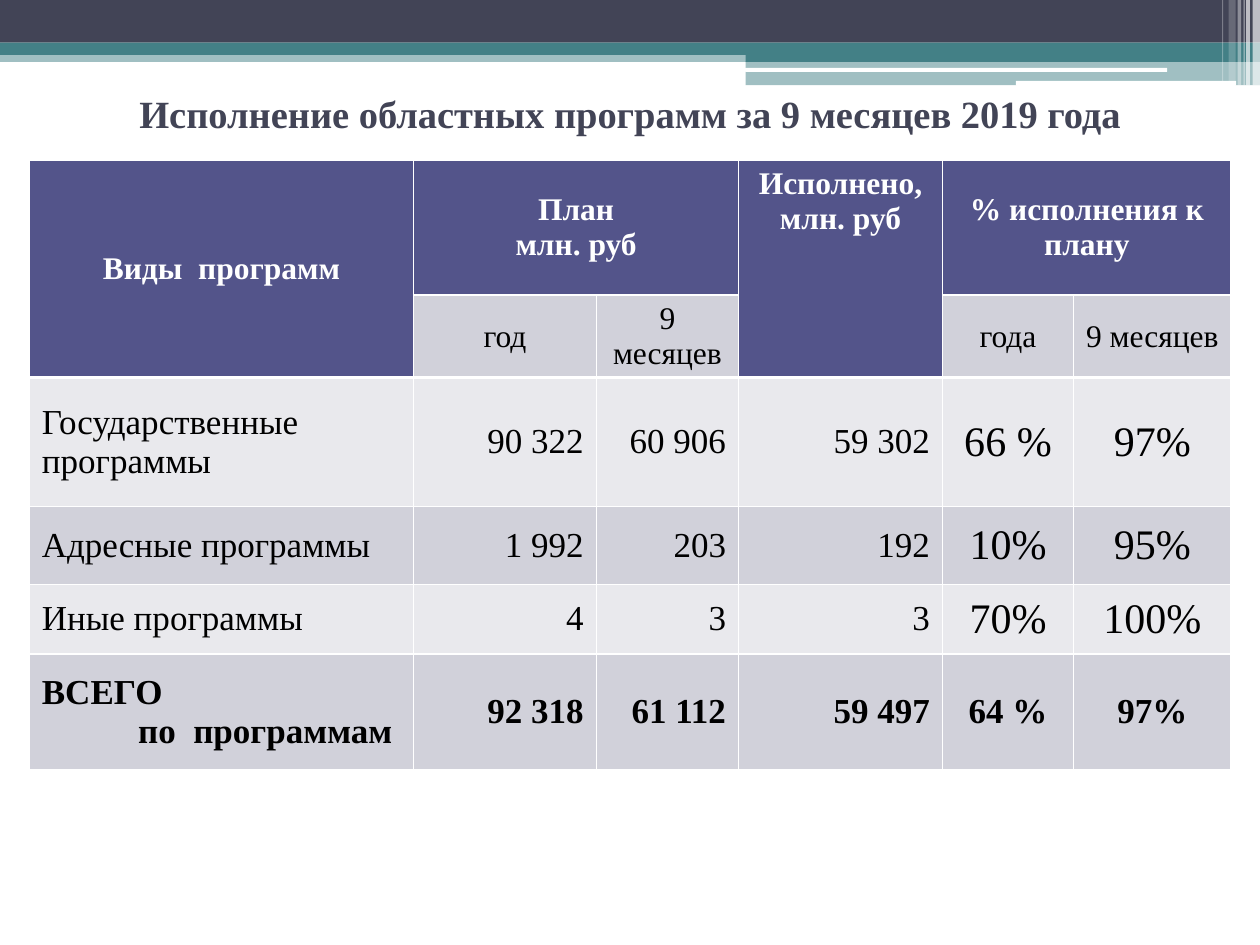
from dataclasses import dataclass

from lxml.etree import SubElement
from pptx import Presentation
from pptx.dml.color import RGBColor
from pptx.enum.shapes import MSO_SHAPE as SHAPE
from pptx.enum.text import MSO_ANCHOR as ANCHOR, PP_ALIGN as ALIGN
from pptx.oxml import parse_xml
from pptx.oxml.ns import nsdecls, qn
from pptx.util import Cm, Pt


@dataclass(frozen=True)
class Theme:
    font: str = "Times New Roman"
    dark: str = "424456"
    teal: str = "438086"
    white: str = "FFFFFF"
    black: str = "000000"
    header: str = "53548A"
    light: str = "E9E9ED"
    mid: str = "D1D1DA"
    title_size: int = 22
    header_size: int = 18
    body_size: int = 20
    percent_size: int = 24
    border: float = 1
    heavy_border: float = 2.25


theme = Theme()


def add_bar(left, top, width, height, color, opacity=100, kind=SHAPE.RECTANGLE):
    bar = slide.shapes.add_shape(kind, Cm(left), Cm(top), Cm(width), Cm(height))
    bar.shadow.inherit = False
    bar.line.fill.background()
    bar.fill.solid()
    bar.fill.fore_color.rgb = RGBColor.from_string(color)
    if opacity < 100:
        srgb = bar.fill._xPr.find(qn("a:solidFill")).find(qn("a:srgbClr"))
        SubElement(srgb, qn("a:alpha"), val=str(opacity * 1000))


def fill_cell(row, col, lines, color, text_color, size, bold, align):
    cell = table.cell(row, col)
    cell.fill.solid()
    cell.fill.fore_color.rgb = RGBColor.from_string(color)
    cell.vertical_anchor = ANCHOR.MIDDLE
    cell.text = lines
    for paragraph in cell.text_frame.paragraphs:
        paragraph.alignment = align
        paragraph.font.name = theme.font
        paragraph.font.size = Pt(size)
        paragraph.font.bold = bold
        paragraph.font.color.rgb = RGBColor.from_string(text_color)
    return cell


prs = Presentation()
prs.slide_width, prs.slide_height = Cm(25.4), Cm(19.05)
slide = prs.slides.add_slide(prs.slide_layouts[5])

# Bands across the top
add_bar(0, 1.02, 25.4, 0.23, theme.teal, 50)
add_bar(0, 0, 25.4, 0.86, theme.dark)
add_bar(0, 0.86, 25.4, 0.25, theme.teal)
add_bar(15.03, 1, 10.37, 0.25, theme.teal)
add_bar(15.03, 1.24, 10.37, 0.48, theme.teal, 50)
add_bar(15.02, 1.37, 8.51, 0.08, theme.white, kind=SHAPE.ROUNDED_RECTANGLE)
add_bar(20.48, 1.63, 4.44, 0.1, theme.white, kind=SHAPE.ROUNDED_RECTANGLE)

# Pale stripes in the top right corner: left, width, height, opacity
for left, width, height, opacity in [
    (25.25, 0.15, 1.73, 65),
    (25.12, 0.08, 1.73, 65),
    (25.07, 0.02, 1.73, 60),
    (24.95, 0.07, 1.73, 40),
    (24.77, 0.14, 1.63, 20),
    (24.64, 0.02, 1.63, 30),
]:
    add_bar(left, 0, width, height, theme.white, opacity)

# Title
title = slide.shapes.title
title.left, title.top, title.width, title.height = Cm(0), Cm(1.4), Cm(25.4), Cm(3.18 - 1.4)
title.text_frame.text = "Исполнение областных программ за 9 месяцев 2019 года"
title.text_frame.vertical_anchor = ANCHOR.MIDDLE
heading = title.text_frame.paragraphs[0]
heading.alignment = ALIGN.CENTER
heading.font.name = theme.font
heading.font.size = Pt(theme.title_size)
heading.font.bold = True
heading.font.color.rgb = RGBColor.from_string(theme.dark)

# Table grid
col_widths = [7.75, 3.68, 2.87, 4.11, 2.64, 3.18]
row_heights = [2.72, 1.65, 2.6, 1.57, 1.4, 2.34]
table = slide.shapes.add_table(
    len(row_heights), len(col_widths),
    Cm(0.59), Cm(3.23), Cm(sum(col_widths)), Cm(sum(row_heights)),
).table
table.first_row = table.horz_banding = False
for column, width in zip(table.columns, col_widths):
    column.width = Cm(width)
for row, height in zip(table.rows, row_heights):
    row.height = Cm(height)

# Header: row, column, last row, last column, text
for row, col, last_row, last_col, text in [
    (0, 0, 1, 0, "Виды  программ"),
    (0, 1, 0, 2, "План\nмлн. руб"),
    (0, 3, 1, 3, "Исполнено,\nмлн. руб"),
    (0, 4, 0, 5, "% исполнения к плану"),
]:
    table.cell(row, col).merge(table.cell(last_row, last_col))
    fill_cell(row, col, text, theme.header, theme.white,
              theme.header_size, True, ALIGN.CENTER)
table.cell(0, 3).vertical_anchor = ANCHOR.TOP

for col, text in [(1, "год"), (2, "9 месяцев"), (4, "года"), (5, "9 месяцев")]:
    fill_cell(1, col, text, theme.mid, theme.black,
              theme.header_size, False, ALIGN.CENTER)

# Programmes and the total
programmes = [
    ("Государственные программы", "90 322", "60 906", "59 302", "66 %", "97%"),
    ("Адресные программы", "1 992", "203", "192", "10%", "95%"),
    ("Иные программы", "4", "3", "3", "70%", "100%"),
    ("ВСЕГО\nпо  программам", "92 318", "61 112", "59 497", "64 %", "97%"),
]
aligns = [ALIGN.LEFT] + [ALIGN.RIGHT] * 3 + [ALIGN.CENTER] * 2
for row, values in enumerate(programmes, start=2):
    is_total = row == len(row_heights) - 1
    for col, (value, align) in enumerate(zip(values, aligns)):
        is_percent = align == ALIGN.CENTER and not is_total
        fill_cell(row, col, value, theme.mid if row % 2 else theme.light, theme.black,
                  theme.percent_size if is_percent else theme.body_size,
                  is_total, align)

# Second line of the total's label is indented
total_label = table.cell(5, 0).text_frame.paragraphs[1]
total_label._p.get_or_add_pPr().set("marL", str(Cm(1.94)))

# White cell borders, heavier between header and body
for row in range(len(row_heights)):
    for col in range(len(col_widths)):
        properties = table.cell(row, col)._tc.get_or_add_tcPr()
        for place, side in enumerate("LRTB"):
            is_heavy = (row, side) in [(1, "B"), (2, "T")] or (
                row == 0 and col in (0, 3) and side == "B")
            width = Pt(theme.heavy_border if is_heavy else theme.border)
            properties.insert(place, parse_xml(
                f'<a:ln{side} {nsdecls("a")} w="{width}"><a:solidFill>'
                f'<a:srgbClr val="{theme.white}"/></a:solidFill></a:ln{side}>'))

prs.save("out.pptx")
